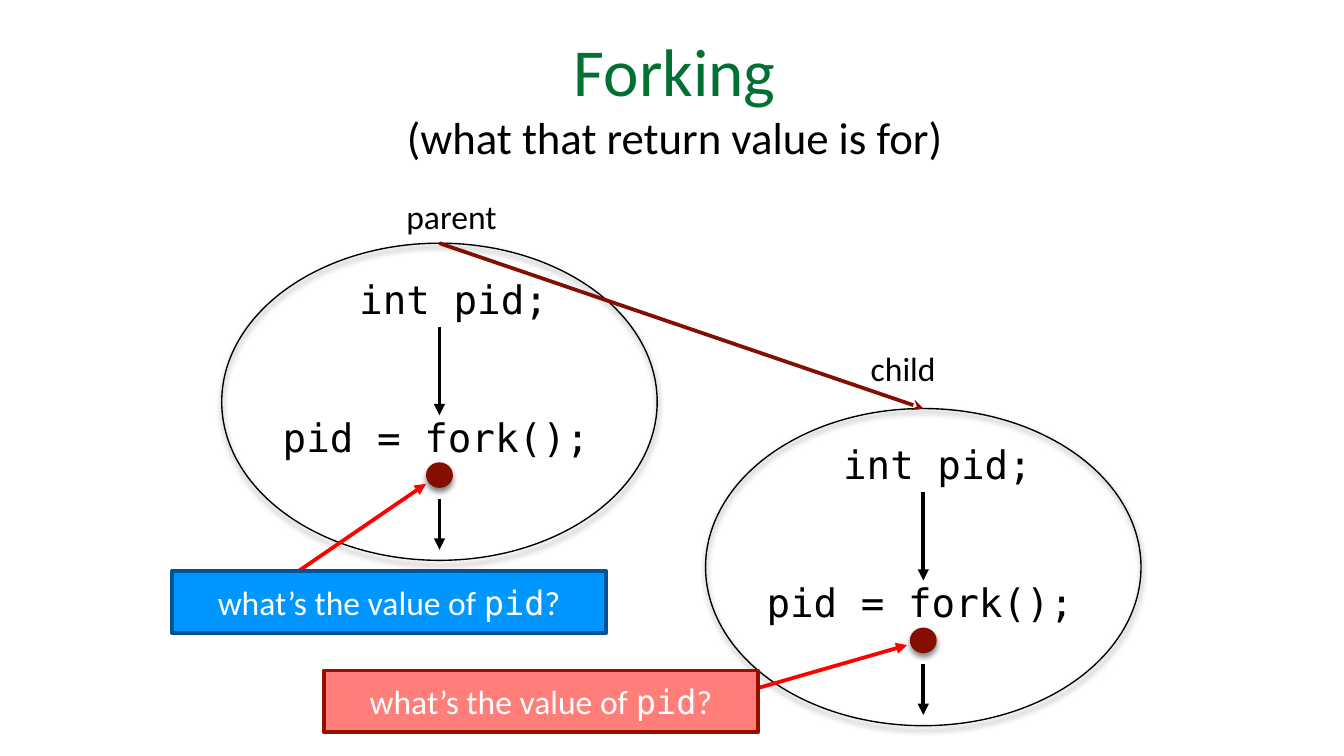
from lxml import etree
from pptx import Presentation
from pptx.dml.color import RGBColor
from pptx.enum import shapes, text
from pptx.oxml import parse_xml
from pptx.oxml.ns import qn
from pptx.util import Inches, Pt

BLACK = RGBColor(0x00, 0x00, 0x00)
WHITE = RGBColor(0xFF, 0xFF, 0xFF)
RED = RGBColor(0xFF, 0x00, 0x00)
MAROON = RGBColor(0x84, 0x0F, 0x00)
GREEN = RGBColor(0x00, 0x70, 0x33)
BLUE = RGBColor(0x00, 0x96, 0xFF)
NAVY = RGBColor(0x00, 0x54, 0x93)
SALMON = RGBColor(0xFF, 0x7E, 0x79)
BRICK = RGBColor(0x94, 0x11, 0x00)
SANS = "Calibri"
MONO = "DejaVu Sans Mono"
SHADOW = (
    '<a:outerShdw xmlns:a="http://schemas.openxmlformats.org/drawingml/2006/main"'
    ' blurRad="38100" dist="25400" dir="5400000" rotWithShape="0">'
    '<a:srgbClr val="000000"><a:alpha val="50000"/></a:srgbClr></a:outerShdw>'
)

presentation = Presentation()
presentation.slide_width = Inches(10)
presentation.slide_height = Inches(10) * 9 // 16
slide = presentation.slides.add_slide(presentation.slide_layouts[6])


def add_text(shape, lines, wrap=False):
    frame = shape.text_frame
    frame.word_wrap = wrap
    frame.vertical_anchor = text.MSO_ANCHOR.MIDDLE
    frame.margin_left = frame.margin_right = Inches(0.04)
    frame.margin_top = frame.margin_bottom = Inches(0.04)
    for index, (runs, size, color) in enumerate(lines):
        paragraph = frame.add_paragraph() if index else frame.paragraphs[0]
        paragraph.alignment = text.PP_ALIGN.CENTER
        paragraph.font.size = Pt(size)
        paragraph.font.color.rgb = color
        paragraph.font.name = runs[0][1]
        for words, font in runs:
            run = paragraph.add_run()
            run.text = words
            if font != runs[0][1]:
                run.font.name = font


def add_arrow(start, end, color, head="triangle"):
    points = [Inches(value) for value in (*start, *end)]
    arrow = slide.shapes.add_connector(shapes.MSO_CONNECTOR.STRAIGHT, *points)
    arrow.line.color.rgb = color
    arrow.line.width = Pt(2)
    etree.SubElement(arrow.line._get_or_add_ln(), qn("a:tailEnd"), type=head)
    etree.SubElement(arrow._element.spPr, qn("a:effectLst"))
    return arrow


processes = []
for name, left, top, label_left, label_top, label_width, pointer in [
    ("parent", 1.65, 1.81, 2.83, 1.4, 1.06, ((2.22, 4.25), (3.17, 3.6))),
    ("child", 5.25, 3.04, 6.4, 2.53, 0.64, ((5.43, 5.18), (6.75, 4.8))),
]:
    center = left + 1.62
    process = slide.shapes.add_shape(
        shapes.MSO_SHAPE.OVAL, Inches(left), Inches(top), Inches(3.24), Inches(2.36))
    process.fill.background()
    process.line.color.rgb = BLACK
    process.line.width = Pt(0.75)
    processes.append(process)

    for start, end in [(0.62, 1.28), (1.9, 2.28)]:
        add_arrow((center, top + start), (center, top + end), BLACK)
    add_arrow(*pointer, RED)

    for words, font, size, x, y, width, height in [
        ("int pid;", MONO, 21, left + 0.98, top + 0.19, 1.49, 0.44),
        ("pid = fork();", MONO, 21, left + 0.41, top + 1.22, 2.37, 0.44),
        (name, SANS, 18, label_left, label_top, label_width, 0.42),
    ]:
        box = slide.shapes.add_textbox(Inches(x), Inches(y), Inches(width), Inches(height))
        add_text(box, [([(words, font)], size, BLACK)])

    dot = slide.shapes.add_shape(
        shapes.MSO_SHAPE.OVAL, Inches(center - 0.1), Inches(top + 1.63), Inches(0.2), Inches(0.19))
    dot.fill.solid()
    dot.fill.fore_color.rgb = MAROON
    dot.line.fill.background()

    for oval in (process, dot):
        oval.shadow.inherit = False
        oval._element.spPr.find(qn("a:effectLst")).append(parse_xml(SHADOW))

parent, child = processes
fork_arrow = add_arrow((3.27, 1.81), (6.87, 3.04), MAROON, "stealth")
fork_arrow.begin_connect(parent, 0)
fork_arrow.end_connect(child, 0)

question = [("what’s the value of ", SANS), ("pid", MONO), ("?", SANS)]
for left, top, fill, border in [(1.28, 4.25, BLUE, NAVY), (2.41, 4.99, SALMON, BRICK)]:
    callout = slide.shapes.add_shape(
        shapes.MSO_SHAPE.RECTANGLE, Inches(left), Inches(top), Inches(3.23), Inches(0.46))
    callout.shadow.inherit = False
    callout.fill.solid()
    callout.fill.fore_color.rgb = fill
    callout.line.color.rgb = border
    callout.line.width = Pt(2)
    add_text(callout, [(question, 18, WHITE)], wrap=True)

title = slide.shapes.add_textbox(Inches(2.04), Inches(0.02), Inches(5.93), Inches(1.39))
add_text(title, [
    ([("Forking", SANS)], 36, GREEN),
    ([("(what that return value is for)", SANS)], 24, BLACK),
], wrap=True)
for paragraph in title.text_frame.paragraphs:
    paragraph._p.get_or_add_pPr().set("marL", str(Inches(0.03)))

presentation.save("out.pptx")
